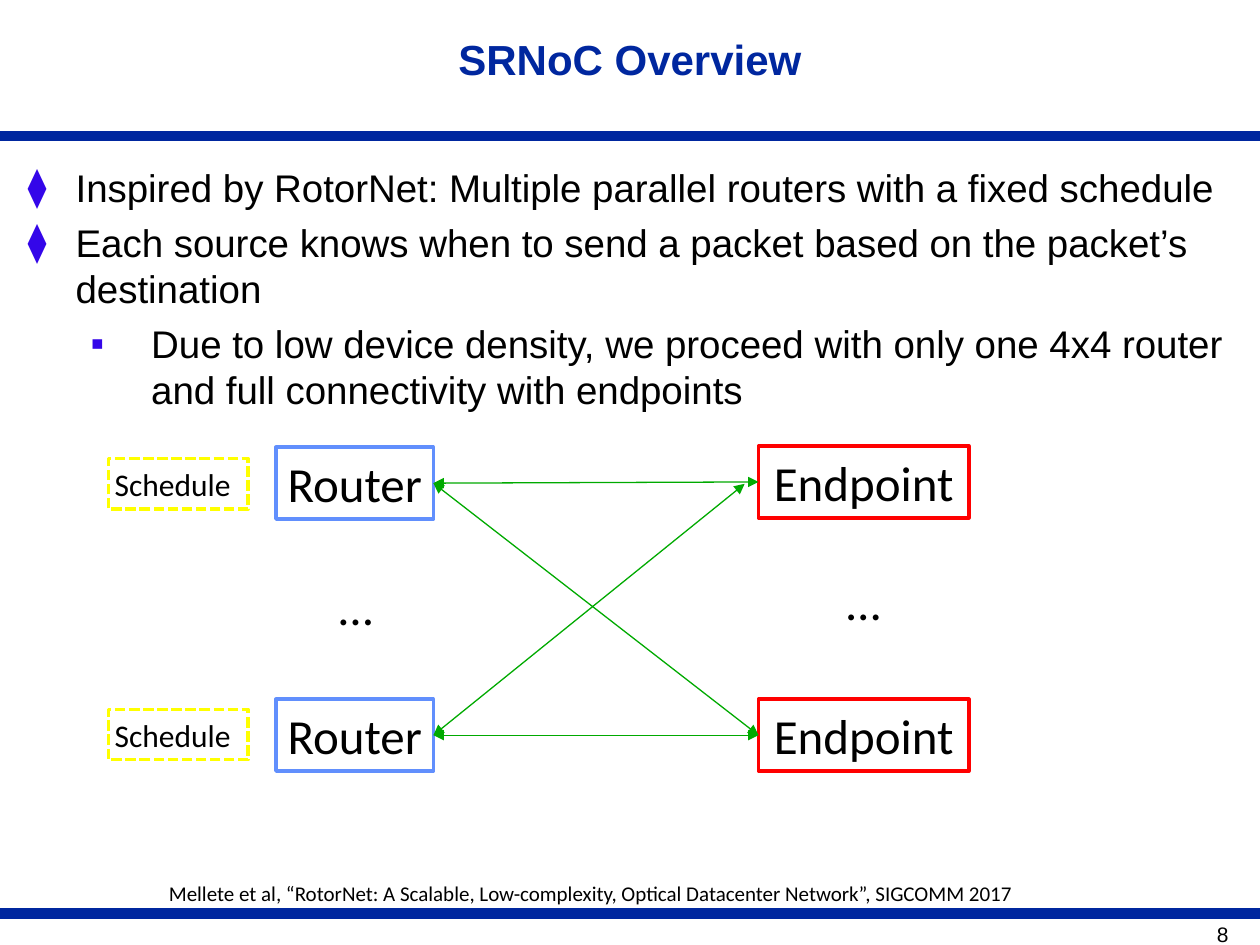
from lxml.etree import SubElement
from pptx import Presentation
from pptx.dml.color import RGBColor
from pptx.enum.dml import MSO_LINE
from pptx.enum.shapes import MSO_CONNECTOR, MSO_SHAPE
from pptx.enum.text import MSO_ANCHOR, MSO_AUTO_SIZE, PP_ALIGN
from pptx.oxml.ns import qn
from pptx.util import Inches, Pt

# Content
TITLE = "SRNoC Overview"
BULLETS = [
    (0, "Inspired by RotorNet: Multiple parallel routers with a fixed schedule"),
    (0, "Each source knows when to send a packet based on the packet’s destination"),
    (1, "Due to low device density, we proceed with only one 4x4 router "
        "and full connectivity with endpoints"),
]
BULLET_STYLES = [("⧫", 0.38, 0.38), ("▪", 0.98, 0.48)]  # sign, margin, hanging
CITATION = ("Mellete et al, “RotorNet: A Scalable, Low-complexity, "
            "Optical Datacenter Network”, SIGCOMM 2017")
# text, left, tops, width, height, size, line colour, dashed, alignment
BOX_KINDS = [
    ("Router", 2.19, (3.55, 5.55), 1.25, 0.57, 28, "618FFD", False, PP_ALIGN.CENTER),
    ("Endpoint", 6.02, (3.54, 5.55), 1.67, 0.57, 28, "FF0000", False, PP_ALIGN.CENTER),
    ("Schedule", 0.86, (3.64, 5.63), 1.11, 0.4, 18, "FFFF00", True, PP_ALIGN.LEFT),
]
# text, left, top, width, height, size, font, alignment, anchor, wrap
LABELS = [
    ("8", 9.5, 7.27, 0.3, 0.29, 12, "Arial", PP_ALIGN.RIGHT, MSO_ANCHOR.MIDDLE, False),
    (CITATION, 1.29, 6.94, 7.18, 0.3, 12, "Calibri", PP_ALIGN.LEFT, MSO_ANCHOR.TOP, True),
    ("…", 2.64, 4.53, 0.37, 0.57, 28, "Calibri", PP_ALIGN.LEFT, MSO_ANCHOR.TOP, False),
    ("…", 6.67, 4.49, 0.37, 0.57, 28, "Calibri", PP_ALIGN.LEFT, MSO_ANCHOR.TOP, False),
]
NAVY, GREEN, BLACK = "00279F", "00AA00", "000000"
LEFT_SIDE, RIGHT_SIDE = 1, 3


def color(value):
    return RGBColor.from_string(value)


def place(shape, left, top, width, height):
    shape.left, shape.top = Inches(left), Inches(top)
    shape.width, shape.height = Inches(width), Inches(height)


def format_frame(frame, anchor=MSO_ANCHOR.TOP, wrap=True):
    frame.margin_left = frame.margin_right = Inches(0.05)
    frame.margin_top = frame.margin_bottom = Inches(0.05)
    frame.auto_size = MSO_AUTO_SIZE.NONE
    frame.word_wrap = wrap
    frame.vertical_anchor = anchor


def format_paragraph(paragraph, size, font="Calibri", alignment=PP_ALIGN.LEFT,
                     ink=BLACK, bold=False):
    paragraph.alignment = alignment
    for run in paragraph.runs:
        run.font.size, run.font.name, run.font.bold = Pt(size), font, bold
        run.font.color.rgb = color(ink)


def add_line(slide, start, end, ink, width, arrows=False):
    line = slide.shapes.add_connector(
        MSO_CONNECTOR.STRAIGHT, *(Inches(value) for value in (*start, *end)))
    line.line.color.rgb = color(ink)
    line.line.width = Pt(width)
    if arrows:
        outline = line.line._get_or_add_ln()
        for tag in ("a:headEnd", "a:tailEnd"):
            SubElement(outline, qn(tag), type="triangle")
    SubElement(line._element.spPr, qn("a:effectLst"))
    return line


def add_bullet(paragraph, level):
    sign, margin, hanging = BULLET_STYLES[level]
    paragraph.level = level
    properties = paragraph._p.get_or_add_pPr()
    properties.set("marL", str(Inches(margin)))
    properties.set("indent", str(-Inches(hanging)))
    bullet_color = SubElement(properties, qn("a:buClr"))
    SubElement(bullet_color, qn("a:srgbClr"), val="3406E9")
    SubElement(properties, qn("a:buFont"), typeface="Arial")
    SubElement(properties, qn("a:buChar"), char=sign)


def add_box(slide, text, bounds, size, ink, dashed, alignment):
    box = slide.shapes.add_shape(
        MSO_SHAPE.RECTANGLE, *(Inches(value) for value in bounds))
    box.shadow.inherit = False
    box.fill.solid()
    box.fill.fore_color.rgb = color("FFFFFF")
    box.line.color.rgb = color(ink)
    box.line.width = Pt(2)
    if dashed:
        box.line.dash_style = MSO_LINE.SQUARE_DOT
    box.text_frame.text = text
    format_frame(box.text_frame)
    format_paragraph(box.text_frame.paragraphs[0], size, alignment=alignment)
    return box


presentation = Presentation()
presentation.slide_width, presentation.slide_height = Inches(10), Inches(7.5)
slide = presentation.slides.add_slide(presentation.slide_layouts[1])

# Rules under the title and above the footer
for y in (1.08, 7.25):
    add_line(slide, (10, y), (0, y), NAVY, 6)

# Title
title = slide.shapes.title
place(title, 1.75, 0.08, 6.5, 0.83)
title.text_frame.text = TITLE
format_frame(title.text_frame, MSO_ANCHOR.MIDDLE)
heading = title.text_frame.paragraphs[0]
heading.line_spacing = 0.85
format_paragraph(heading, 24, "Arial", PP_ALIGN.CENTER, NAVY, True)

# Bullet list
body = slide.placeholders[1]
place(body, 0.17, 1.25, 9.67, 5.69)
body.text_frame.text = "\n".join(text for _, text in BULLETS)
format_frame(body.text_frame)
for number, (paragraph, (level, _)) in enumerate(zip(body.text_frame.paragraphs, BULLETS)):
    paragraph.space_before = Pt(5 if number else 0)
    add_bullet(paragraph, level)
    format_paragraph(paragraph, 22, "Arial")

# Page number, citation and ellipses
for text, left, top, width, height, size, font, alignment, anchor, wrap in LABELS:
    label = slide.shapes.add_textbox(0, 0, 0, 0)
    place(label, left, top, width, height)
    label.text_frame.text = text
    format_frame(label.text_frame, anchor, wrap)
    format_paragraph(label.text_frame.paragraphs[0], size, font, alignment)

# Routers, endpoints and schedules
boxes = {}
for text, left, tops, width, height, *style in BOX_KINDS:
    boxes[text] = [add_box(slide, text, (left, top, width, height), *style) for top in tops]

# Every endpoint is linked with every router
for row, endpoint in enumerate(boxes["Endpoint"]):
    for column, router in enumerate(boxes["Router"]):
        rising = (row, column) == (0, 1)  # this arrow stops short of its endpoint
        link = add_line(slide, (5.91, 3.84), (3.45, 5.84), GREEN, 0.75, arrows=True)
        if not rising:
            link.begin_connect(endpoint, LEFT_SIDE)
        link.end_connect(router, RIGHT_SIDE)

presentation.save("out.pptx")
